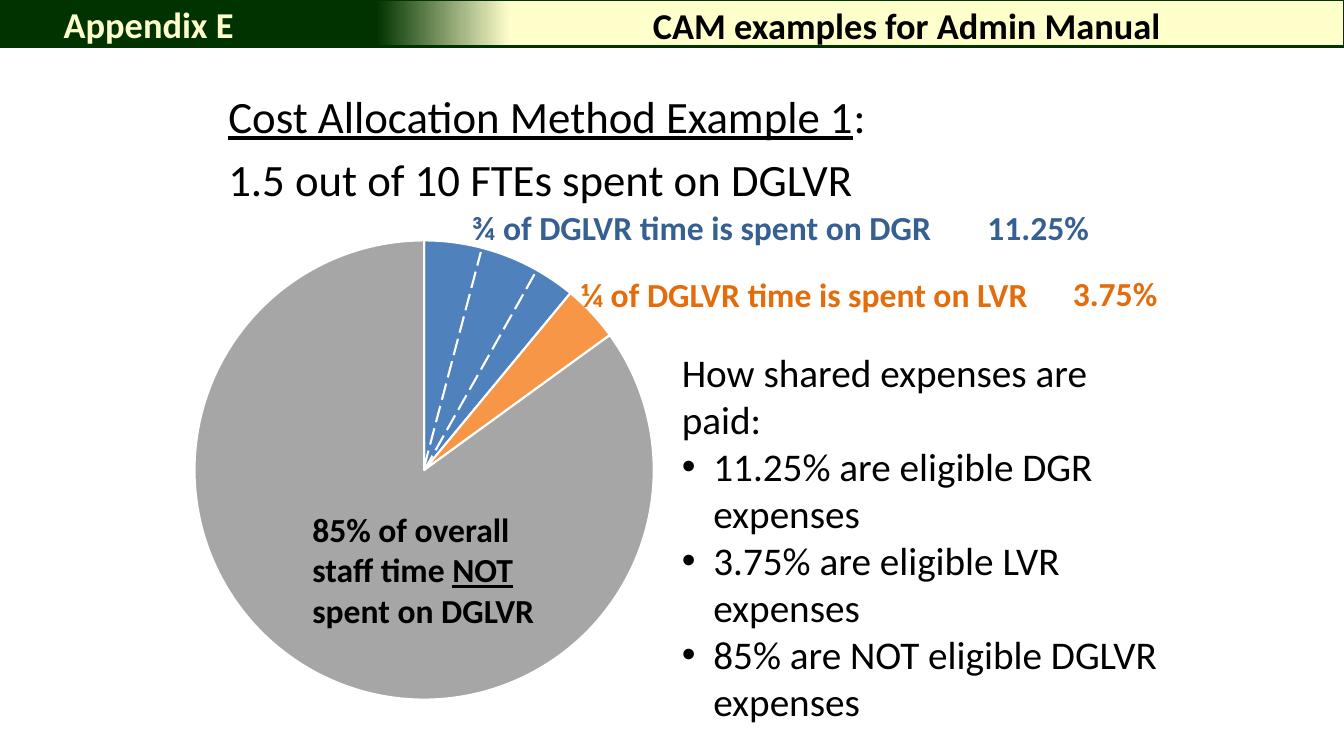
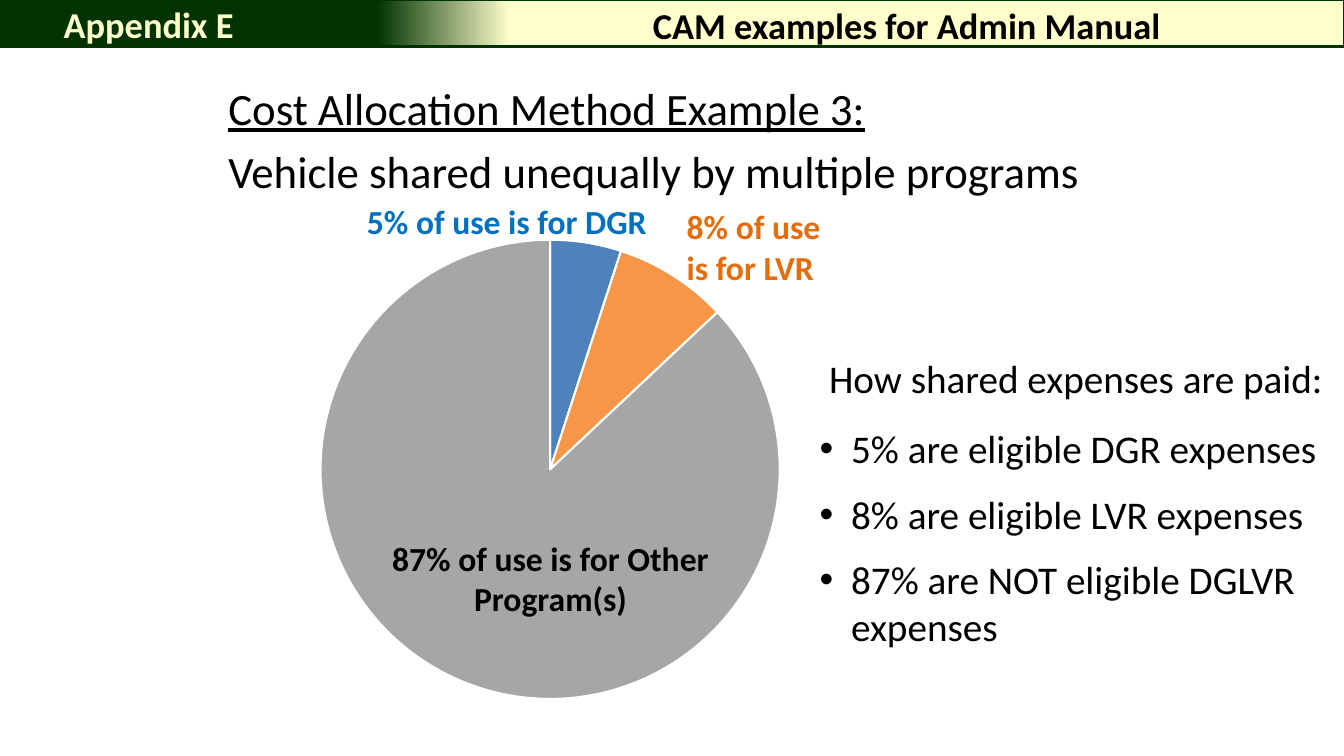
from lxml import etree
from pptx import Presentation, util as u
from pptx.chart import data
from pptx.dml.color import RGBColor
from pptx.enum import chart as ch, dml, shapes, text
from pptx.oxml import ns

Pt = u.Pt
FONT = "Calibri"
BLACK, WHITE, GREEN, CREAM = "000000", "FFFFFF", "003300", "FFFFCC"
NAVY, BLUE, ORANGE = "376092", "0070C0", "E46C0A"
SLICES = ["4F81BD", "F79646", "A6A6A6"]
LEFT, CENTER = text.PP_ALIGN.LEFT, text.PP_ALIGN.CENTER
INDENT = 22.5

HEADER = [
    ("CAM examples for Admin Manual", (336, 0, 624, 36), BLACK, CENTER),
    ("Appendix E", (38.4, -0.7, 345.5, 36), CREAM, LEFT),
]

# Runs are (text, underlined); labels are (runs, box, colour, alignment);
# expense lines are (text, space before), the first one being the lead-in.
SLIDES = [
    dict(
        heading=[[("Cost Allocation Method Example 1", True), (":", False)],
                 [("1.5 out of 10 FTEs spent on DGLVR", False)]],
        heading_top=60,
        shares=[11, 4, 85],
        pie_box=(54, 161.3, 498, 349),
        dividers=[((303, 336), (384, 192)), ((303, 333.5), (343.5, 180))],
        labels=[
            ([("¾ of DGLVR time is spent on DGR", False)],
             (330, 144, 402, 36), NAVY, LEFT),
            ([("85% of overall staff time ", False), ("NOT", True),
              (" spent on DGLVR", False)],
             (216, 360, 174, 94.5), BLACK, LEFT),
            ([("¼ of DGLVR time is spent on LVR", False)],
             (408, 192, 368, 36), ORANGE, LEFT),
            ([("11.25%", False)], (698.2, 144, 90, 36), NAVY, LEFT),
            ([("3.75%", False)], (759.2, 191.5, 77, 36), ORANGE, LEFT),
        ],
        expenses=[("How shared expenses are paid:", 0),
                  ("11.25% are eligible DGR expenses", 0),
                  ("3.75% are eligible LVR expenses", 0),
                  ("85% are NOT eligible DGLVR expenses", 0)],
        expenses_box=(480, 245.2, 360, 278.5),
        lead_align=LEFT,
    ),
    dict(
        heading=[[("Cost Allocation Method Example 3:", True)],
                 [("Vehicle shared unequally by multiple programs", False)]],
        heading_top=54,
        shares=[5, 8, 87],
        pie_box=(144, 160.8, 498, 349),
        dividers=[],
        labels=[
            ([("5% of use is for DGR", False)],
             (255, 140.1, 231, 36), BLUE, LEFT),
            ([("87% of use is for Other Program(s)", False)],
             (256, 380.7, 274.5, 65.5), BLACK, CENTER),
            ([("8% of use is for LVR", False)],
             (483.4, 143.7, 129, 65.5), ORANGE, LEFT),
        ],
        expenses=[("How shared expenses are paid:", 0),
                  ("5% are eligible DGR expenses", 16.8),
                  ("8% are eligible LVR expenses", 13.3),
                  ("87% are NOT eligible DGLVR expenses", 12.5)],
        expenses_box=(578.4, 249.4, 380, 219.5),
        lead_align=CENTER,
    ),
]


def rgb(hex_color):
    return RGBColor.from_string(hex_color)


def points(values):
    return [Pt(v) for v in values]


def add_text(s, box, anchor=text.MSO_ANCHOR.TOP):
    """Add an empty wrapping text box and return its text frame."""
    tf = s.shapes.add_textbox(*points(box)).text_frame
    tf.word_wrap = True
    tf.vertical_anchor = anchor
    return tf


def add_paragraph(tf, runs, size, color=BLACK, bold=False, align=LEFT, before=0):
    """Fill the frame's first paragraph if it is empty, else append one."""
    p = tf.paragraphs[0] if not tf.paragraphs[0].runs else tf.add_paragraph()
    p.alignment = align
    p.space_before = Pt(before)
    for words, underlined in runs:
        r = p.add_run()
        r.text = words
        r.font.name, r.font.size, r.font.bold = FONT, Pt(size), bold
        r.font.underline = underlined
        r.font.color.rgb = rgb(color)
    return p


def add_bullet(p):
    pPr = p._p.get_or_add_pPr()
    pPr.set("marL", str(Pt(INDENT)))
    pPr.set("indent", str(-Pt(INDENT)))
    etree.SubElement(pPr, ns.qn("a:buFont"), typeface="Arial")
    etree.SubElement(pPr, ns.qn("a:buChar"), char="•")


def add_header(s):
    band = s.shapes.add_shape(shapes.MSO_SHAPE.RECTANGLE, *points((0, 0, 960, 33)))
    band.shadow.inherit = False
    band.fill.gradient()
    band.fill.gradient_angle = 0
    for stop, position, color in zip(band.fill.gradient_stops, (0.28, 0.38), (GREEN, CREAM)):
        stop.position = position
        stop.color.rgb = rgb(color)
    band.line.color.rgb = rgb(GREEN)
    band.line.width = Pt(2)
    for words, box, color, align in HEADER:
        tf = add_text(s, box, text.MSO_ANCHOR.MIDDLE)
        add_paragraph(tf, [(words, False)], 26, color, True, align)


def add_pie(s, box, shares):
    cd = data.CategoryChartData()
    cd.categories = [str(i + 1) for i in range(len(shares))]
    cd.add_series("Series 1", shares)
    chart = s.shapes.add_chart(ch.XL_CHART_TYPE.PIE, *points(box), cd).chart
    chart.has_legend = chart.has_title = False
    chart.font.name, chart.font.size = FONT, Pt(10)
    chart.font.color.rgb = rgb(BLACK)
    plot = chart.plots[0]
    plot.vary_by_categories = True
    for i, color in enumerate(SLICES):
        fmt = plot.series[0].points[i].format
        fmt.fill.solid()
        fmt.fill.fore_color.rgb = rgb(color)
        fmt.line.color.rgb = rgb(WHITE)
        fmt.line.width = Pt(1.5)
    set_plot_area(chart, x=0.17, y=0.03, w=0.66, h=0.94)


def set_plot_area(chart, **fractions):
    """Fix the plot area as fractions of the chart frame."""
    area = chart._chartSpace.chart.plotArea
    for old in area.findall(ns.qn("c:layout")):
        area.remove(old)
    layout = etree.Element(ns.qn("c:layout"))
    area.insert(0, layout)
    manual = etree.SubElement(layout, ns.qn("c:manualLayout"))
    settings = dict(layoutTarget="inner", xMode="edge", yMode="edge", **fractions)
    for name, value in settings.items():
        etree.SubElement(manual, ns.qn("c:" + name), val=str(value))


def add_divider(s, start, end):
    line = s.shapes.add_connector(shapes.MSO_CONNECTOR.STRAIGHT, *points(start + end))
    line.line.color.rgb = rgb(WHITE)
    line.line.width = Pt(1.5)
    line.line.dash_style = dml.MSO_LINE.LONG_DASH
    etree.SubElement(line._element.spPr, ns.qn("a:effectLst"))


def add_expenses(s, box, lines, lead_align):
    tf = add_text(s, box)
    for i, (words, before) in enumerate(lines):
        p = add_paragraph(tf, [(words, False)], 28, before=before,
                          align=LEFT if i else lead_align)
        if i:
            add_bullet(p)


def build_slide(prs, content):
    s = prs.slides.add_slide(prs.slide_layouts[6])
    add_header(s)
    tf = add_text(s, (156, content["heading_top"], 648, 468))
    for i, runs in enumerate(content["heading"]):
        add_paragraph(tf, runs, 32, before=6.4 * i)
    add_pie(s, content["pie_box"], content["shares"])
    for start, end in content["dividers"]:
        add_divider(s, start, end)
    for runs, box, color, align in content["labels"]:
        add_paragraph(add_text(s, box), runs, 24, color, True, align)
    add_expenses(s, content["expenses_box"], content["expenses"], content["lead_align"])


def main():
    prs = Presentation()
    prs.slide_width, prs.slide_height = Pt(960), Pt(540)
    for content in SLIDES:
        build_slide(prs, content)
    prs.save("out.pptx")


if __name__ == "__main__":
    main()
